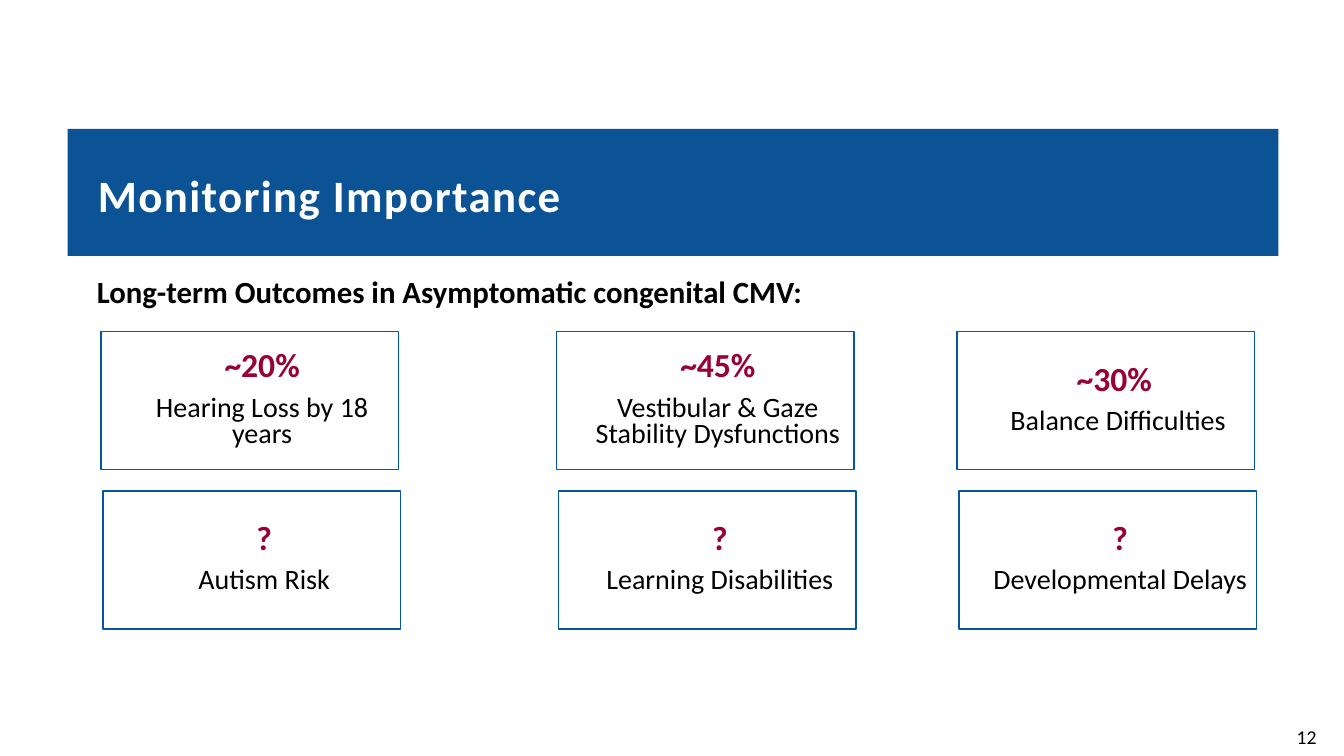
from dataclasses import dataclass

from pptx import Presentation
from pptx.dml.color import RGBColor
from pptx.enum.shapes import MSO_SHAPE
from pptx.enum.text import MSO_ANCHOR, PP_ALIGN
from pptx.util import Inches, Pt

RECTANGLE = MSO_SHAPE.RECTANGLE
MIDDLE, TOP = MSO_ANCHOR.MIDDLE, MSO_ANCHOR.TOP
LEFT, CENTER = PP_ALIGN.LEFT, PP_ALIGN.CENTER

TITLE = "Monitoring Importance"
SUBTITLE = "Long-term Outcomes in Asymptomatic congenital CMV:"
PAGE_NUMBER = "12"
OUTCOMES = [
    [
        ("~20%", "Hearing Loss by 18 years"),
        ("~45%", "Vestibular & Gaze Stability Dysfunctions"),
        ("~30% ", "Balance Difficulties"),
    ],
    [
        ("?", "Autism Risk"),
        ("?", "Learning Disabilities"),
        ("?", "Developmental Delays"),
    ],
]


@dataclass(frozen=True)
class Theme:
    font: str = "Calibri"
    banner: str = "0B5394"
    border: str = "0156A6"
    accent: str = "990033"
    ink: str = "000000"
    paper: str = "FFFFFF"
    title: int = 32
    subtitle: int = 22
    figure: int = 24
    label: int = 20
    number: int = 14


THEME = Theme()
SLIDE_SIZE = (13.33, 7.5)
BANNER = (0.67, 1.28, 12.01, 1.26)
SUBTITLE_AREA = (0.66, 2.62, 12.02, 0.57)
NUMBER_AREA = (12.63, 7.14, 0.66, 0.34)
COLUMN_LEFTS = (1, 5.52, 9.49)
FIRST_ROW, ROW_STEP, ROW_SHIFT = 3.29, 1.58, 0.02
CARD_SIZE = (2.95, 1.37)
CARD_INSETS = (0.3, 0.05, 0.05, 0.05)


def add_box(page, area, insets, fill=None, line=None, width=1, anchor=MIDDLE):
    box = page.shapes.add_shape(RECTANGLE, *map(Inches, area))
    box.shadow.inherit = False
    if fill:
        box.fill.solid()
        box.fill.fore_color.rgb = RGBColor.from_string(fill)
    else:
        box.fill.background()
    if line:
        box.line.color.rgb = RGBColor.from_string(line)
        box.line.width = Pt(width)
    else:
        box.line.fill.background()
    frame = box.text_frame
    frame.word_wrap = True
    frame.vertical_anchor = anchor
    frame.margin_left, frame.margin_top, frame.margin_right, frame.margin_bottom = map(Inches, insets)
    return frame


def write(para, text, size, color, bold=False, align=LEFT, leading=None, gap=0):
    para.alignment = align
    para.line_spacing = leading
    para.space_before = para.space_after = Pt(gap)
    span = para.add_run()
    span.text = text
    span.font.name = THEME.font
    span.font.size = Pt(size)
    span.font.bold = bold
    span.font.color.rgb = RGBColor.from_string(color)
    return span


def add_card(page, area, figure, label):
    frame = add_box(page, area, CARD_INSETS, line=THEME.border)
    write(frame.paragraphs[0], figure, THEME.figure, THEME.accent, True, CENTER, 0.8, 4)
    write(frame.add_paragraph(), label, THEME.label, THEME.ink, False, CENTER, 0.8, 4)


def main():
    deck = Presentation()
    deck.slide_width, deck.slide_height = map(Inches, SLIDE_SIZE)
    page = deck.slides.add_slide(deck.slide_layouts[6])

    number = add_box(page, NUMBER_AREA, (0.1, 0.05, 0.1, 0.05), line=THEME.paper, width=0.75, anchor=TOP)
    write(number.paragraphs[0], PAGE_NUMBER, THEME.number, THEME.ink, align=CENTER)

    banner = add_box(page, BANNER, (0.3, 0.2, 0.3, 0.05), fill=THEME.banner)
    heading = write(banner.paragraphs[0], TITLE, THEME.title, THEME.paper, True, leading=0.8)
    heading._r.get_or_add_rPr().set("spc", "100")

    subtitle = add_box(page, SUBTITLE_AREA, (0.3, 0.1, 0.3, 0.1))
    write(subtitle.paragraphs[0], SUBTITLE, THEME.subtitle, THEME.ink, True, leading=Pt(24))

    for row, outcomes in enumerate(OUTCOMES):
        for left, (figure, label) in zip(COLUMN_LEFTS, outcomes):
            area = (left + row * ROW_SHIFT, FIRST_ROW + row * ROW_STEP, *CARD_SIZE)
            add_card(page, area, figure, label)

    deck.save("out.pptx")


if __name__ == "__main__":
    main()
